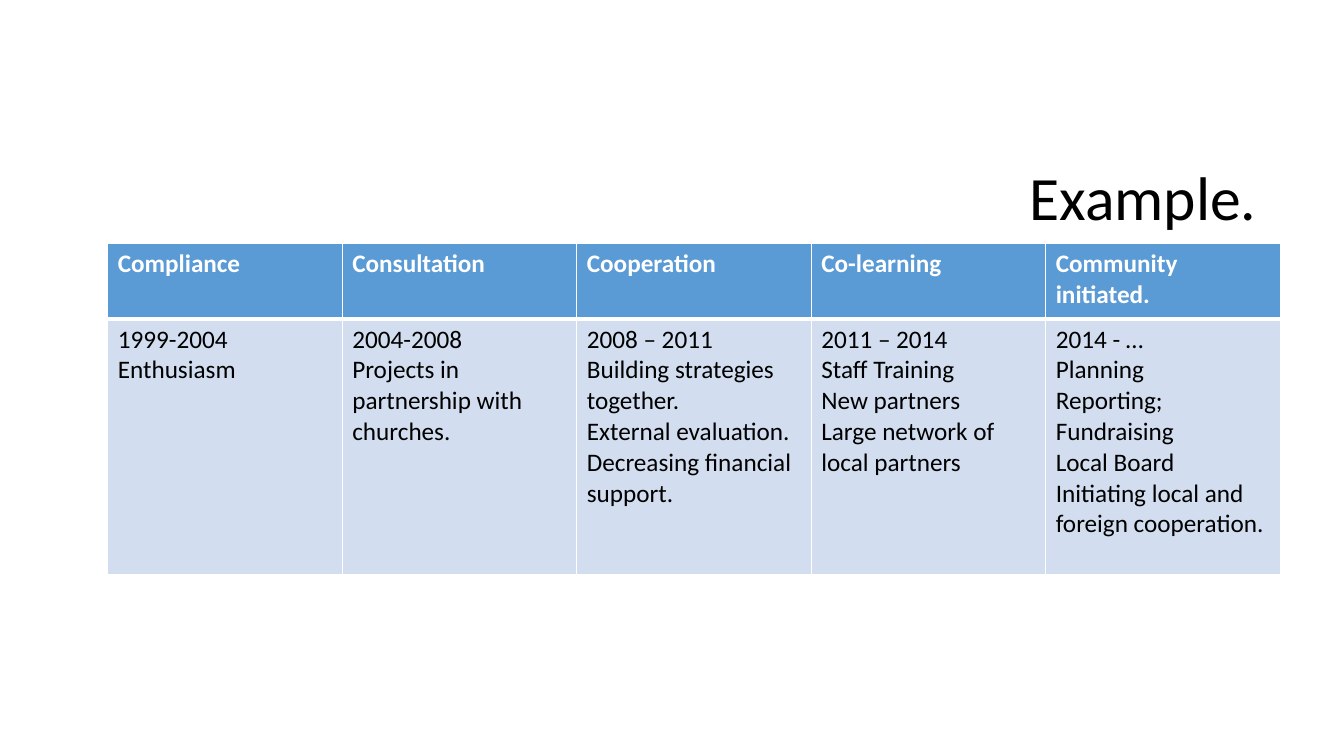
"""Build the slide that shows the stages of a partnership as a table."""
from lxml.etree import SubElement
from pptx import Presentation
from pptx.dml.color import RGBColor
from pptx.enum.text import MSO_ANCHOR, MSO_AUTO_SIZE, PP_ALIGN
from pptx.oxml.ns import qn
from pptx.util import Pt

STAGES = [
    ("Compliance", ["1999-2004", "Enthusiasm"]),
    ("Consultation", ["2004-2008", "Projects in partnership with churches."]),
    ("Cooperation", ["2008 – 2011", "Building strategies together.",
                     "External evaluation.", "Decreasing financial support."]),
    ("Co-learning", ["2011 – 2014", "Staff Training", "New partners",
                     "Large network of local partners"]),
    ("Community initiated.", ["2014 - …", "Planning", "Reporting; Fundraising",
                              "Local Board",
                              "Initiating local and foreign cooperation."]),
]


def colour(code):
    return RGBColor.from_string(code)


class StageSlide:
    font = "Calibri"
    black, white = "000000", "FFFFFF"
    header_fill, body_fill = "5B9BD5", "D2DEEF"

    def __init__(self, deck):
        self.page = deck.slides.add_slide(deck.slide_layouts[5])
        self.page.background.fill.solid()
        self.page.background.fill.fore_color.rgb = colour(self.white)

    def add_span(self, para, text, size, ink, bold=False):
        span = para.add_run()
        span.text = text
        span.font.name = self.font
        span.font.size = Pt(size)
        span.font.bold = bold
        span.font.color.rgb = colour(ink)

    def title(self, text, left, top, width, height):
        box = self.page.shapes.title
        box.left, box.top = Pt(left), Pt(top)
        box.width, box.height = Pt(width), Pt(height)
        frame = box.text_frame
        frame.word_wrap = True
        frame.auto_size = MSO_AUTO_SIZE.NONE
        frame.vertical_anchor = MSO_ANCHOR.MIDDLE
        para = frame.paragraphs[0]
        para.alignment = PP_ALIGN.RIGHT
        para.line_spacing = 0.9
        self.add_span(para, text, 44, self.black)

    def border(self, cell, side, width):
        properties = cell._tc.get_or_add_tcPr()
        line = SubElement(properties, qn(f"a:ln{side}"), w=str(Pt(width)))
        fill = SubElement(line, qn("a:solidFill"))
        SubElement(fill, qn("a:srgbClr"), val=self.white)

    def cell(self, cell, lines, fill, ink, bold, borders):
        for side, width in borders.items():
            self.border(cell, side, width)
        cell.fill.solid()
        cell.fill.fore_color.rgb = colour(fill)
        frame = cell.text_frame
        for index, text in enumerate(lines):
            para = frame.add_paragraph() if index else frame.paragraphs[0]
            self.add_span(para, text, 18, ink, bold)

    def table(self, stages, left, top, column_width, row_heights):
        table = self.page.shapes.add_table(
            2, len(stages), Pt(left), Pt(top),
            Pt(column_width * len(stages)), Pt(sum(row_heights))).table
        for row, height in zip(table.rows, row_heights):
            row.height = Pt(height)
        for index, (name, lines) in enumerate(stages):
            table.columns[index].width = Pt(column_width)
            self.cell(table.cell(0, index), [name], self.header_fill,
                      self.white, True, {"L": 1, "R": 1, "T": 1, "B": 3})
            self.cell(table.cell(1, index), lines, self.body_fill,
                      self.black, False, {"L": 1, "R": 1, "T": 3, "B": 1})


def main():
    deck = Presentation()
    deck.slide_width, deck.slide_height = Pt(960), Pt(540)
    slide = StageSlide(deck)
    slide.title("Example.", 77, 91.4, 828, 104.4)
    slide.table(STAGES, 77, 174, 167.5, [54, 182.5])
    deck.save("out.pptx")


if __name__ == "__main__":
    main()
